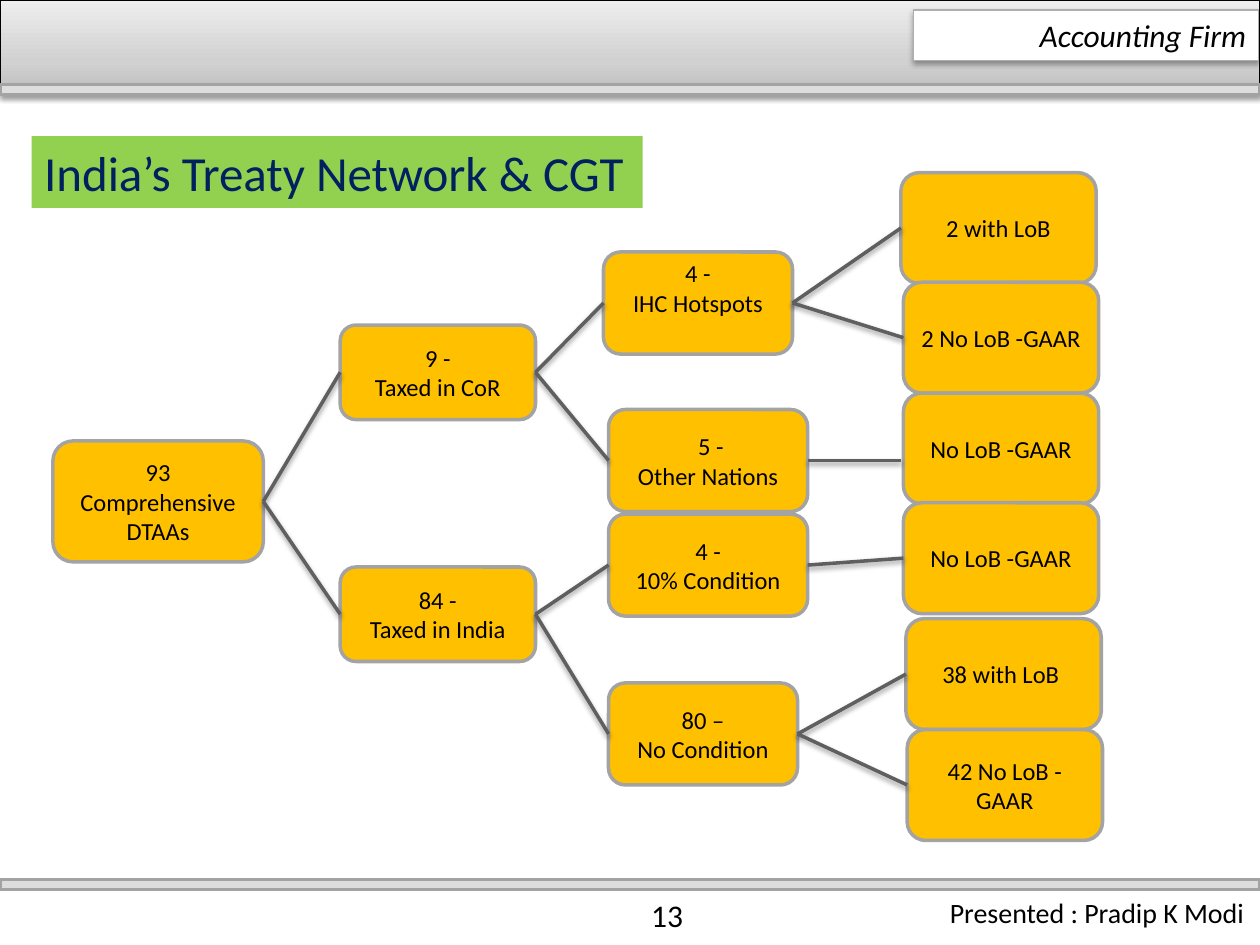
from copy import deepcopy

from lxml import etree
from pptx import Presentation
from pptx.dml.color import RGBColor
from pptx.enum.shapes import MSO_CONNECTOR, MSO_SHAPE
from pptx.enum.text import MSO_ANCHOR, PP_ALIGN
from pptx.oxml.ns import qn
from pptx.util import Inches, Pt

RECT, ROUND = MSO_SHAPE.RECTANGLE, MSO_SHAPE.ROUNDED_RECTANGLE
STRAIGHT = MSO_CONNECTOR.STRAIGHT
LEFT, CENTER, RIGHT = PP_ALIGN.LEFT, PP_ALIGN.CENTER, PP_ALIGN.RIGHT
TOP, MIDDLE = MSO_ANCHOR.TOP, MSO_ANCHOR.MIDDLE
LEFT_SITE, RIGHT_SITE = 1, 3


def style(sp, fill=None, line=None, width=2, shadow=None):
    """Set fill and outline; shadow is the opacity in percent of a downward shadow."""
    if fill:
        sp.fill.solid()
        sp.fill.fore_color.rgb = RGBColor.from_string(fill)
    if line:
        sp.line.color.rgb = RGBColor.from_string(line)
        sp.line.width = Pt(width)
    effects = etree.SubElement(sp._element.spPr, qn("a:effectLst"))
    if shadow:
        outer = etree.SubElement(effects, qn("a:outerShdw"), blurRad=str(Pt(3.1)),
                                 dist=str(Pt(1.7)), dir="5400000", rotWithShape="0")
        color = etree.SubElement(outer, qn("a:srgbClr"), val="000000")
        etree.SubElement(color, qn("a:alpha"), val=str(shadow * 1000))


def write(sp, text, size, align=CENTER, anchor=MIDDLE, color="000000", italic=False, wrap=True):
    tf = sp.text_frame
    tf.text = text
    tf.word_wrap = wrap
    tf.vertical_anchor = anchor
    for p in tf.paragraphs:
        p.alignment = align
        for r in p.runs:
            r.font.name = "Calibri"
            r.font.size = Pt(size)
            r.font.italic = italic
            r.font.color.rgb = RGBColor.from_string(color)


prs = Presentation()
prs.slide_width, prs.slide_height = Inches(10), Inches(7.5)
s = prs.slides.add_slide(prs.slide_layouts[5])
shapes = s.shapes

# Header, bands and footer
header = shapes.add_shape(RECT, 0, 0, prs.slide_width, Inches(0.75))
header.fill.gradient()
header.fill.gradient_angle = 90
stop_list = header._element.spPr.find(".//" + qn("a:gsLst"))
stop_list.append(deepcopy(stop_list[0]))
stops = [(0, "BDBDBD"), (0.35, "D1D1D1"), (1, "EEEEEE")]
for stop, (position, color) in zip(header.fill.gradient_stops, stops):
    stop.position = position
    stop.color.rgb = RGBColor.from_string(color)
style(header, line="000000", width=0.75, shadow=38)

for top in (0.67, 6.98):
    band = shapes.add_shape(RECT, 0, Inches(top), prs.slide_width, Inches(0.08))
    style(band, "DDDDDD", "A3A3A3")

firm = shapes.add_shape(RECT, Inches(7.25), Inches(0.08), Inches(2.74), Inches(0.4))
style(firm, "FFFFFF", "AEAEAE", 0.75, shadow=35)
write(firm, "Accounting Firm", 18, RIGHT, TOP, italic=True)

presenter = shapes.add_textbox(Inches(7.44), Inches(7.06), Inches(2.57), Inches(0.37))
write(presenter, "Presented : Pradip K Modi", 16, LEFT, TOP, wrap=False)
number = shapes.add_textbox(Inches(4.13), Inches(7.06), Inches(2.33), Inches(0.4))
write(number, "13", 18)

title = shapes.title
title.left, title.top = Inches(0.25), Inches(1.08)
title.width, title.height = Inches(4.85), Inches(0.57)
style(title, "92D050")
write(title, "India’s Treaty Network & CGT", 28, LEFT, TOP, "002060", wrap=False)

# Treaty tree: each level has a box height, then key, left, top, width and text
levels = [
    (0.96, [("all", 0.42, 3.5, 1.67, "93\nComprehensive\nDTAAs")]),
    (0.75, [("residence", 2.7, 2.58, 1.55, "9 -\nTaxed in CoR"),
            ("india", 2.7, 4.5, 1.55, "84 -\nTaxed in India")]),
    (0.81, [("hotspots", 4.79, 2, 1.5, "4 -\nIHC Hotspots"),
            ("others", 4.83, 3.25, 1.58, " 5 -\nOther Nations"),
            ("condition", 4.83, 4.08, 1.58, "4 -\n10% Condition"),
            ("free", 4.83, 5.42, 1.5, "80 –\nNo Condition")]),
    (0.88, [("hotspots lob", 7.15, 1.37, 1.55, "2 with LoB"),
            ("hotspots gaar", 7.17, 2.24, 1.55, "2 No LoB -GAAR"),
            ("others gaar", 7.17, 3.12, 1.55, "No LoB -GAAR"),
            ("condition gaar", 7.17, 3.99, 1.55, "No LoB -GAAR"),
            ("free lob", 7.19, 4.91, 1.55, "38 with LoB "),
            ("free gaar", 7.2, 5.79, 1.55, "42 No LoB - GAAR")]),
]
boxes = {}
for height, nodes in levels:
    for key, left, top, width, text in nodes:
        sp = shapes.add_shape(ROUND, Inches(left), Inches(top), Inches(width), Inches(height))
        style(sp, "FFC000", "A3A3A3")
        write(sp, text, 14)
        boxes[key] = sp
boxes["hotspots"].text_frame.margin_bottom = Inches(0.29)

children = {
    "all": ["residence", "india"],
    "residence": ["hotspots", "others"],
    "india": ["condition", "free"],
    "hotspots": ["hotspots lob", "hotspots gaar"],
    "others": ["others gaar"],
    "condition": ["condition gaar"],
    "free": ["free lob", "free gaar"],
}
for parent, keys in children.items():
    for key in keys:
        line = shapes.add_connector(STRAIGHT, 0, 0, 0, 0)
        line.begin_connect(boxes[parent], RIGHT_SITE)
        if key == "others gaar":  # runs level, off the middle of its box
            line.end_x, line.end_y = Inches(7.15), line.begin_y
        else:
            line.end_connect(boxes[key], LEFT_SITE)
        style(line, line="5F5F5F", shadow=38)

prs.save("out.pptx")
